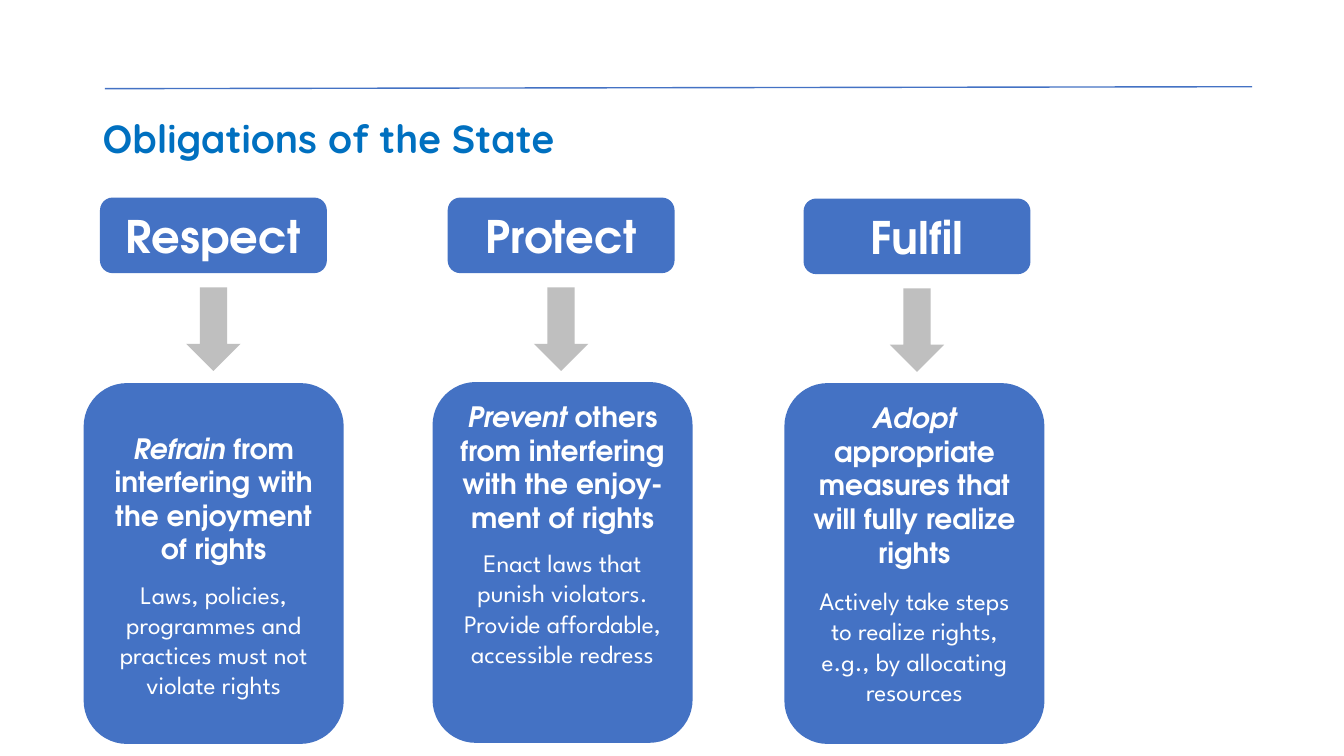
"""Build the slide on the three obligations of the State."""
from dataclasses import dataclass

from lxml.etree import SubElement
from pptx import Presentation
from pptx.dml.color import RGBColor as Rgb
from pptx.enum.shapes import MSO_CONNECTOR as Connector, MSO_SHAPE as Preset
from pptx.enum.text import MSO_ANCHOR as Anchor, PP_ALIGN as Align
from pptx.oxml.ns import qn
from pptx.util import Inches, Pt

COLOURS = {"title": "0070C0", "block": "4472C4", "arrow": "BFBFBF", "text": "FFFFFF"}
TITLE_FONT, HEADING_FONT, BODY_FONT = "Quicksand", "TeX Gyre Adventor", "League Spartan"
WIDTH, HEIGHT = Inches(13.33), Inches(7.5)
LABEL_WIDTH, ARROW_WIDTH, PANEL_WIDTH = 16.88, 4.05, 19.35
LABEL_TOP, ARROW_TOP = 26.13, 38


@dataclass(frozen=True)
class Obligation:
    """One column; centres and tops are percentages of the slide."""
    name: str
    verb: str
    duty: str
    means: str
    label_centre: float
    panel_centre: float
    panel_top: float
    drop: float = 0
    inset: float = 0.05
    gap: float = 9.6


OBLIGATIONS = [
    Obligation("Respect", "Refrain", " from interfering with the enjoyment of rights",
               "Laws, policies, programmes and practices must not violate rights",
               15.88, 15.9, 50.67, inset=0.35),
    Obligation("Protect", "Prevent ", "others from interfering with the enjoy-ment of rights",
               "Enact laws that punish violators. Provide affordable, accessible redress",
               41.75, 41.86, 50.53),
    Obligation("Fulfil", "Adopt ", "appropriate measures that will fully realize rights",
               "Actively take steps to realize rights, e.g., by allocating resources",
               68.23, 68.04, 50.67, drop=0.13, gap=12),
]


def across(percent: float) -> int:
    """Turn a percentage of the slide's width into a length."""
    return round(WIDTH * percent / 100)


def down(percent: float) -> int:
    """Turn a percentage of the slide's height into a length."""
    return round(HEIGHT * percent / 100)


def write(paragraph, text: str, *, size: float, font: str, colour: str = "text",
          bold: bool = False, italic: bool = False, align=Align.CENTER) -> None:
    """Add a formatted run to a paragraph."""
    paragraph.alignment = align
    run = paragraph.add_run()
    run.text = text
    run.font.size, run.font.name = Pt(size), font
    run.font.bold, run.font.italic = bold, italic
    run.font.color.rgb = Rgb.from_string(COLOURS[colour])


def add_block(slide, preset, centre: float, top: float, width: float, height: float,
              colour: str = "block"):
    """Add a flat filled shape centred on a column."""
    block = slide.shapes.add_shape(preset, across(centre - width / 2), down(top),
                                   across(width), down(height))
    block.shadow.inherit = False
    block.fill.solid()
    block.fill.fore_color.rgb = Rgb.from_string(COLOURS[colour])
    block.line.fill.background()
    block.text_frame.word_wrap = True
    return block


def add_rule(slide) -> None:
    """Draw the thin line above the title."""
    rule = slide.shapes.add_connector(Connector.STRAIGHT, across(7.8), down(11.73),
                                      across(93.17), down(11.47))
    rule.line.color.rgb = Rgb.from_string(COLOURS["block"])
    rule.line.width = Pt(1)
    SubElement(rule._element.spPr, qn("a:effectLst"))


def add_title(slide) -> None:
    """Write the slide's title."""
    title = slide.shapes.add_textbox(across(6.9), down(15.2), across(86.27), down(8.93))
    title.text_frame.word_wrap = True
    heading = title.text_frame.paragraphs[0]
    heading.line_spacing = 0.9
    write(heading, "Obligations of the State", size=28, font=TITLE_FONT,
          colour="title", bold=True, align=Align.LEFT)


def add_obligation(slide, duty: Obligation) -> None:
    """Draw a label, its arrow and the panel it leads to."""
    label = add_block(slide, Preset.ROUNDED_RECTANGLE, duty.label_centre,
                      LABEL_TOP + duty.drop, LABEL_WIDTH, 10)
    label.text_frame.vertical_anchor = Anchor.MIDDLE
    write(label.text_frame.paragraphs[0], duty.name, size=32, font=HEADING_FONT, bold=True)

    add_block(slide, Preset.DOWN_ARROW, duty.label_centre, ARROW_TOP + duty.drop,
              ARROW_WIDTH, 11.07, "arrow")

    panel = add_block(slide, Preset.ROUNDED_RECTANGLE, duty.panel_centre,
                      duty.panel_top, PANEL_WIDTH, 47.73).text_frame
    panel.vertical_anchor = Anchor.TOP
    panel.margin_top = Inches(duty.inset)
    summary = panel.paragraphs[0]
    write(summary, duty.verb, size=20, font=HEADING_FONT, bold=True, italic=True)
    write(summary, duty.duty, size=20, font=HEADING_FONT, bold=True)
    means = panel.add_paragraph()
    means.space_before = Pt(duty.gap)
    write(means, duty.means, size=18, font=BODY_FONT)


def main() -> None:
    """Build and save the presentation."""
    deck = Presentation()
    deck.slide_width, deck.slide_height = WIDTH, HEIGHT
    slide = deck.slides.add_slide(deck.slide_layouts[6])
    add_rule(slide)
    add_title(slide)
    for obligation in OBLIGATIONS:
        add_obligation(slide, obligation)
    deck.save("out.pptx")


if __name__ == "__main__":
    main()
